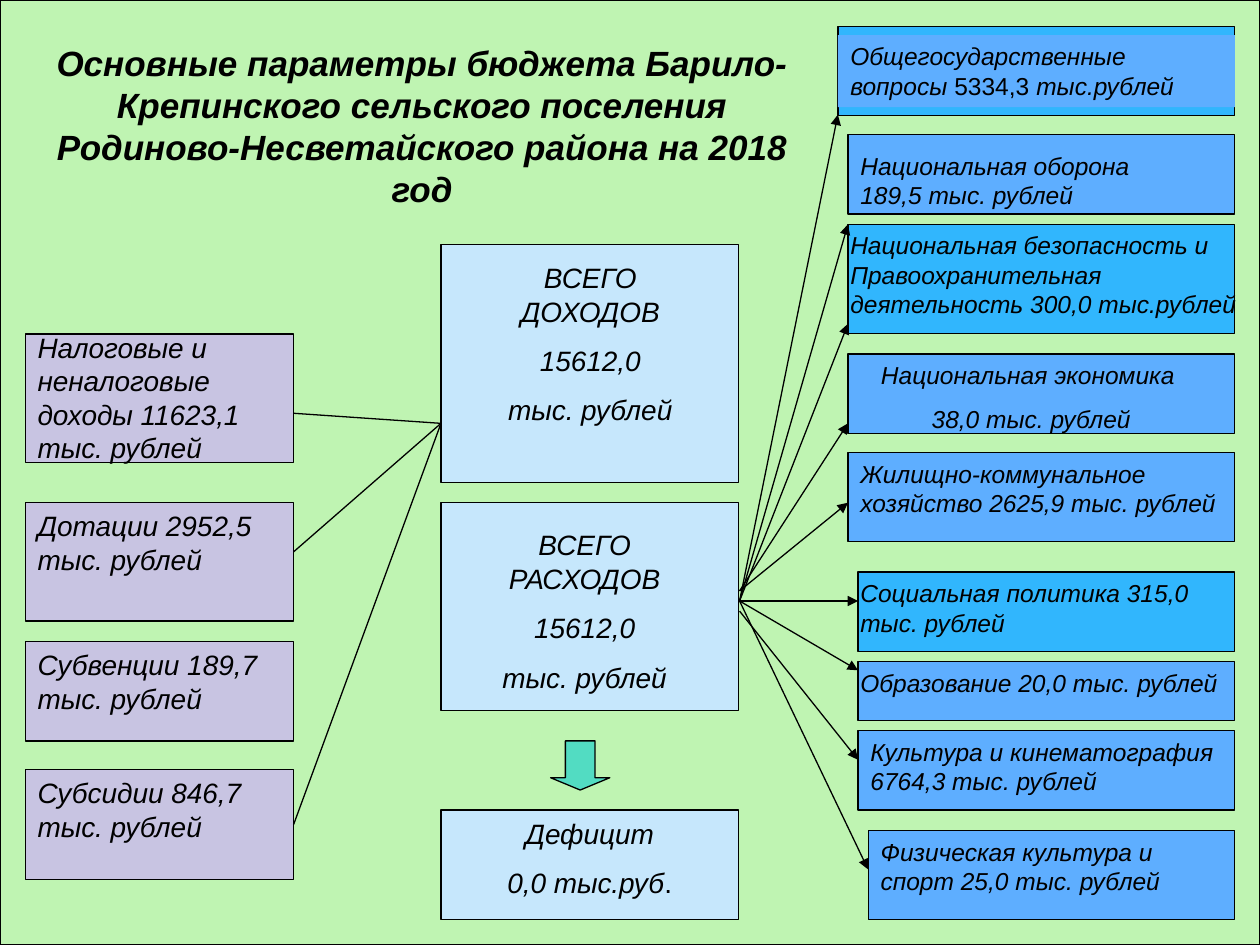
from pptx import Presentation
from pptx import util as u
from pptx.dml.color import RGBColor
from pptx.enum import shapes, text
from pptx.oxml.ns import qn
from lxml import etree

THEME = dict(
    font="Arial", ink="000000", page="BFF4B2", total="C6E7FC",
    source="C8C4E2", blue="5EAEFF", sky="31B6FD", arrow="52DCC2",
    head=20, main=16, small=14, line=0.75, gap=0.57,
)
RECT = shapes.MSO_SHAPE.RECTANGLE
FLOW = shapes.MSO_SHAPE.FLOWCHART_PROCESS
LEFT, MID = text.PP_ALIGN.LEFT, text.PP_ALIGN.CENTER

TITLE = ("Основные параметры бюджета Барило-Крепинского сельского "
         "поселения Родиново-Несветайского района на 2018 год")

# card top, card height, text box, paragraphs
TOTALS = [
    (1.94, 1.89, (3.9, 2.02, 1.57, 1.44),
     ["ВСЕГО ДОХОДОВ", "15612,0", "тыс. рублей"]),
    (3.99, 1.65, (3.58, 4.14, 2.12, 1.84),
     ["ВСЕГО РАСХОДОВ", "15612,0", "тыс. рублей"]),
    (6.43, 0.87, (3.5, 6.43, 2.36, 0.77),
     ["Дефицит", [("0,0 тыс.руб", True), (".", False)]]),
]

# shape, card top, card height, text top, text width, text height, wording, link height
SOURCES = [
    (RECT, 2.65, 1.02, 2.57, 2.2, 1.18,
     "Налоговые и неналоговые доходы 11623,1 тыс. рублей", 3.28),
    (RECT, 3.99, 0.94, 3.99, 2.13, 0.64, "Дотации 2952,5 тыс. рублей", 4.38),
    (FLOW, 5.09, 0.79, 5.09, 2.13, 0.64, "Субвенции 189,7 тыс. рублей", None),
    (RECT, 6.11, 0.87, 6.11, 2.13, 0.64, "Субсидии 846,7 тыс. рублей", "side"),
]

# card left, top, height, fill, text box, paragraphs, arrow start and end heights
COSTS = [
    (6.65, 0.21, 0.71, "sky", (6.65, 0.28, 3.15, 0.57),
     [[("Общегосударственные вопросы ", True), ("5334,3 ", False),
       ("тыс.рублей", True)]], 4.77, 0.91),
    (6.73, 1.07, 0.63, "blue", (6.73, 1.15, 3.07, 0.57),
     ["Национальная оборона", "189,5 тыс. рублей"], 4.77, 1.78),
    (6.73, 1.78, 0.87, "sky", (6.65, 1.78, 3.35, 0.81),
     ["Национальная безопасность и",
      "Правоохранительная деятельность 300,0 тыс.рублей"], 4.77, 2.57),
    (6.73, 2.81, 0.63, "blue", (6.73, 2.81, 2.91, 0.69),
     ["Национальная экономика ", "38,0 тыс. рублей"], 4.69, 3.36),
    (6.73, 3.59, 0.71, "blue", (6.73, 3.59, 3.07, 0.57),
     ["Жилищно-коммунальное хозяйство 2625,9 тыс. рублей"], 4.69, 3.99),
    (6.81, 4.54, 0.63, "sky", (6.73, 4.54, 3.07, 0.57),
     ["Социальная политика 315,0 тыс. рублей"], 4.77, 4.77),
    (6.81, 5.25, 0.47, "blue", (6.73, 5.25, 3.07, 0.33),
     ["Образование 20,0 тыс. рублей"], 4.77, 5.32),
    (6.81, 5.8, 0.63, "blue", (6.81, 5.8, 3.19, 0.57),
     ["Культура и кинематография 6764,3 тыс. рублей"], 4.85, 6.03),
    (6.89, 6.59, 0.71, "blue", (6.89, 6.59, 2.91, 0.57),
     ["Физическая культура и спорт 25,0 тыс. рублей"], 4.77, 6.9),
]
CENTRED, STRIP = 3, 0
COL, WIDE = 3.5, 2.36
SIDE, SPAN = 0.2, 2.13
EDGE, START, HUB = 9.8, 5.87, 3.36


def tint(name):
    return RGBColor.from_string(THEME[name])


def box(slide, area, fill, kind=RECT, line=True):
    item = slide.shapes.add_shape(kind, *map(u.Inches, area))
    item.shadow.inherit = False
    item.fill.solid()
    item.fill.fore_color.rgb = tint(fill)
    if line:
        item.line.color.rgb = tint("ink")
        item.line.width = u.Pt(THEME["line"])
    else:
        item.line.fill.background()
    return item


def write(item, paras, size, align=LEFT, gap=True, bold=False):
    frame = item.text_frame
    frame.word_wrap = True
    frame.vertical_anchor = text.MSO_ANCHOR.TOP
    frame.auto_size = text.MSO_AUTO_SIZE.NONE
    for n, runs in enumerate(paras):
        para = frame.add_paragraph() if n else frame.paragraphs[0]
        para.alignment = align
        para.space_before = u.Pt(round(THEME[size] * THEME["gap"]) if n and gap else 0)
        for words, slant in [(runs, True)] if isinstance(runs, str) else runs:
            run = para.add_run()
            run.text = words
            run.font.name = THEME["font"]
            run.font.size = u.Pt(THEME[size])
            run.font.italic = slant
            run.font.bold = bold
            run.font.color.rgb = tint("ink")


def label(slide, area, *args, **opts):
    write(slide.shapes.add_textbox(*map(u.Inches, area)), *args, **opts)


def link(slide, start, end, head=False):
    wire = slide.shapes.add_connector(
        shapes.MSO_CONNECTOR.STRAIGHT, *map(u.Inches, (*start, *end)))
    wire.line.color.rgb = tint("ink")
    wire.line.width = u.Pt(THEME["line"])
    if head:
        etree.SubElement(wire.line._get_or_add_ln(), qn("a:tailEnd"), type="triangle")
    etree.SubElement(wire._element.spPr, qn("a:effectLst"))
    return wire


def main():
    deck = Presentation()
    deck.slide_width, deck.slide_height = u.Inches(10), u.Inches(7.5)
    slide = deck.slides.add_slide(deck.slide_layouts[5])

    page = box(slide, (0, 0, 10, 7.5), "page")
    title = slide.shapes.title
    page._element.addnext(title._element)
    title.left, title.top, title.width, title.height = map(
        u.Inches, (0.2, 0.28, 6.3, 1.45))
    write(title, [TITLE], "head", MID, bold=True)

    for top, high, area, paras in TOTALS:
        box(slide, (COL, top, WIDE, high), "total")
        label(slide, area, paras, "main", MID)
    box(slide, (4.37, 5.88, 0.47, 0.39), "arrow", shapes.MSO_SHAPE.DOWN_ARROW
        ).adjustments[1] = 0.25

    for kind, top, high, y, wide, tall, words, joint in SOURCES:
        card = box(slide, (SIDE, top, SPAN, high), "source", kind)
        label(slide, (SIDE, y, wide, tall), [words], "main")
        if joint == "side":
            link(slide, (COL, HUB), (SIDE + SPAN, top + high / 2)).end_connect(card, 3)
        elif joint:
            link(slide, (COL, HUB), (SIDE + SPAN, joint))

    for n, (left, top, high, fill, area, paras, start, end) in enumerate(COSTS):
        box(slide, (left, top, EDGE - left, high), fill)
        if n == STRIP:
            write(box(slide, area, "blue", line=False), paras, "small")
        else:
            label(slide, area, paras, "small", MID if n == CENTRED else LEFT,
                  gap=n == CENTRED)
    for left, *_, start, end in COSTS:
        link(slide, (START, start), (left, end), head=True)

    deck.save("out.pptx")


if __name__ == "__main__":
    main()
